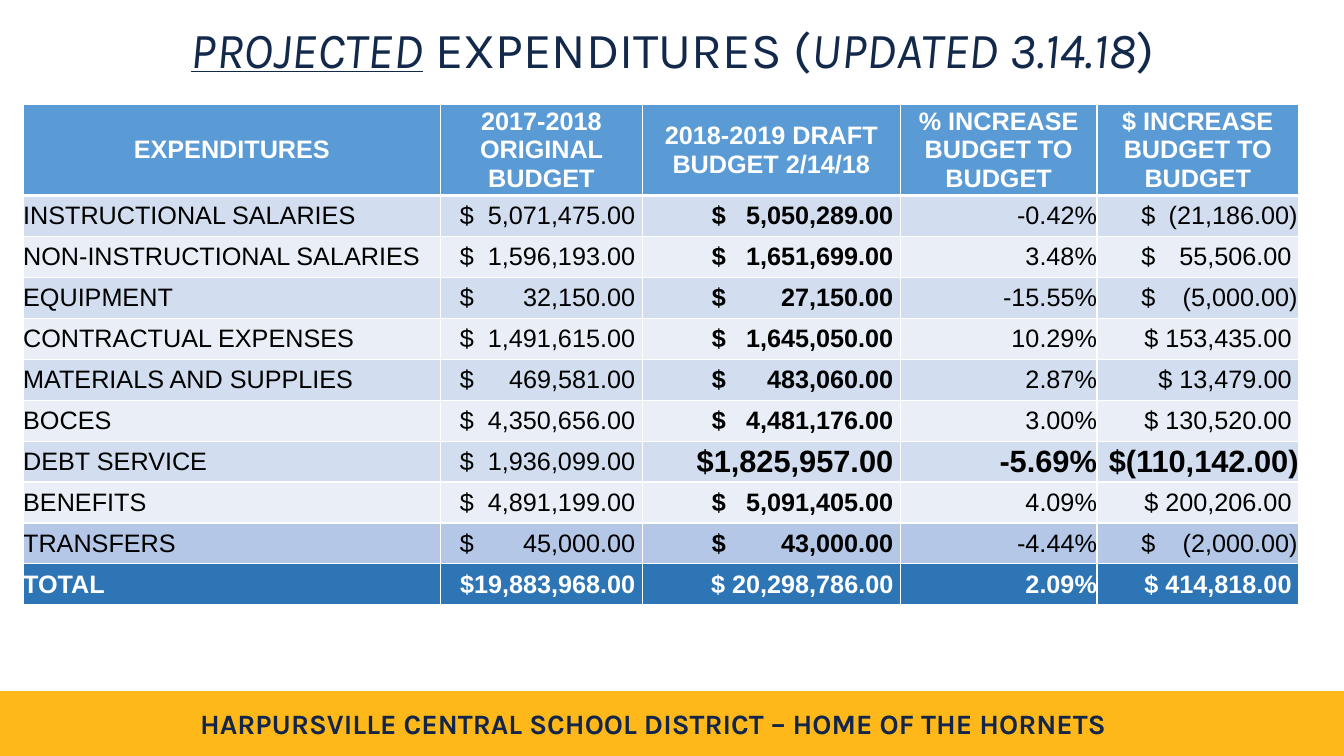
"""Build the projected expenditures slide with its budget table."""
import pptx
import pptx.util
import pptx.dml.color
import pptx.enum.shapes
import pptx.enum.text
import pptx.oxml.ns
import lxml.etree

COLORS = {
    "navy": "13294B", "footer": "132649", "gold": "FFB819", "white": "FFFFFF",
    "black": "000000", "header": "5B9BD5", "odd": "D2DEEF", "even": "EAEFF7",
    "transfers": "B4C7E7", "total": "2E75B6",
}
ALIGN = pptx.enum.text.PP_ALIGN
MIDDLE = pptx.enum.text.MSO_ANCHOR.MIDDLE
inch = pptx.util.Inches


def rgb(name):
    return pptx.dml.color.RGBColor.from_string(COLORS[name])


def write(paragraph, text, color, **formats):
    run = paragraph.add_run()
    run.text = text
    run.font.color.rgb = rgb(color)
    for attribute, value in formats.items():
        setattr(run.font, attribute, value)


deck = pptx.Presentation()
deck.slide_width, deck.slide_height = inch(13.33), inch(7.5)
slide = deck.slides.add_slide(deck.slide_layouts[6])
grid = [inch(part) for part in (0, 6.86, 13.33, 0.63)]

band = slide.shapes.add_shape(pptx.enum.shapes.MSO_SHAPE.RECTANGLE, *grid)
band.shadow.inherit = False
band.fill.solid()
band.fill.fore_color.rgb = rgb("gold")
band.line.color.rgb = rgb("gold")
band.line.width = pptx.util.Pt(1)

motto = slide.shapes.add_textbox(*[inch(part) for part in (1.76, 6.96, 9.44, 0.44)]).text_frame
motto.word_wrap = True
motto.auto_size = pptx.enum.text.MSO_AUTO_SIZE.SHAPE_TO_FIT_TEXT
motto.paragraphs[0].alignment = ALIGN.CENTER
write(motto.paragraphs[0], "HARPURSVILLE CENTRAL SCHOOL DISTRICT – HOME OF THE HORNETS",
      "footer", name="Karla", size=pptx.util.Pt(20), bold=True)

heading = slide.shapes.add_textbox(*[inch(part) for part in (0.92, 0, 11.5, 1.04)])
heading.fill.solid()
heading.fill.fore_color.rgb = rgb("white")
heading.text_frame.word_wrap = True
heading.text_frame.vertical_anchor = MIDDLE
headline = heading.text_frame.paragraphs[0]
headline.alignment = ALIGN.CENTER
headline.line_spacing = 0.9
for words, italic, underline in [
    ("PROJECTED", True, True),
    (" EXPENDITURES (", False, False),
    ("UPDATED 3.14.18", True, False),
    (")", False, False),
]:
    write(headline, words, "navy", name="Karla", size=pptx.util.Pt(36),
          italic=italic, underline=underline)

BUDGET = [
    ["EXPENDITURES", "2017-2018 ORIGINAL BUDGET", "2018-2019 DRAFT BUDGET 2/14/18",
     "% INCREASE BUDGET TO BUDGET", "$ INCREASE BUDGET TO BUDGET"],
    ["INSTRUCTIONAL SALARIES", "\t$\t5,071,475.00", "\t$\t5,050,289.00", "-0.42%", "\t$\t(21,186.00)"],
    ["NON-INSTRUCTIONAL SALARIES", "\t$\t1,596,193.00", "\t$\t1,651,699.00", "3.48%", "\t$\t55,506.00"],
    ["EQUIPMENT", "\t$\t32,150.00", "\t$\t27,150.00", "-15.55%", "\t$\t(5,000.00)"],
    ["CONTRACTUAL EXPENSES", "\t$\t1,491,615.00", "\t$\t1,645,050.00", "10.29%", "$ 153,435.00"],
    ["MATERIALS AND SUPPLIES", "\t$\t469,581.00", "\t$\t483,060.00", "2.87%", "$ 13,479.00"],
    ["BOCES", "\t$\t4,350,656.00", "\t$\t4,481,176.00", "3.00%", "$ 130,520.00"],
    ["DEBT SERVICE", "\t$\t1,936,099.00", "$1,825,957.00", "-5.69%", "$(110,142.00)"],
    ["BENEFITS", "\t$\t4,891,199.00", "\t$\t5,091,405.00", "4.09%", "$ 200,206.00"],
    ["TRANSFERS", "\t$\t45,000.00", "\t$\t43,000.00", "-4.44%", "\t$\t(2,000.00)"],
    ["TOTAL", "$19,883,968.00", "$ 20,298,786.00", "2.09%", "$ 414,818.00"],
]
WIDTHS = [4.14, 2, 2.56, 1.95, 2]
DOLLAR_STOPS = {1: 0.19, 2: 0.69, 4: 0.44}
HEADER_HEIGHT, BODY_HEIGHT = 0.83, 4.06
LAST = len(BUDGET) - 1
ROW_FILLS = {0: "header", LAST - 1: "transfers", LAST: "total"}

budget_table = slide.shapes.add_table(
    len(BUDGET), len(WIDTHS), inch(0.23), inch(1.04),
    inch(sum(WIDTHS)), inch(HEADER_HEIGHT + BODY_HEIGHT)).table
budget_table.first_row = budget_table.horz_banding = False
for column, width in zip(budget_table.columns, WIDTHS):
    column.width = inch(width)

for r, entries in enumerate(BUDGET):
    budget_table.rows[r].height = inch(BODY_HEIGHT / LAST if r else HEADER_HEIGHT)
    debt = entries[0] == "DEBT SERVICE"
    for c, entry in enumerate(entries):
        cell = budget_table.cell(r, c)
        tabbed = "\t" in entry
        gap = 0.07 if r and c and entry.endswith("0") else 0
        for attribute, value in {
            "margin_left": 0, "margin_top": 0, "margin_bottom": 0,
            "margin_right": 0 if tabbed else inch(gap), "vertical_anchor": MIDDLE,
        }.items():
            setattr(cell, attribute, value)

        properties = cell._tc.get_or_add_tcPr()
        for side in "LRTB":
            thick = (r == 0 and side == "B") or (r == 1 and side == "T")
            border = lxml.etree.SubElement(properties, pptx.oxml.ns.qn(f"a:ln{side}"),
                                           w=str(pptx.util.Pt(3 if thick else 1)))
            paint = lxml.etree.SubElement(border, pptx.oxml.ns.qn("a:solidFill"))
            lxml.etree.SubElement(paint, pptx.oxml.ns.qn("a:srgbClr"), val=COLORS["white"])
        cell.fill.solid()
        cell.fill.fore_color.rgb = rgb(ROW_FILLS.get(r, "odd" if r % 2 else "even"))

        line = cell.text_frame.paragraphs[0]
        if r == 0:
            line.alignment = ALIGN.CENTER
        else:
            line.alignment = ALIGN.LEFT if c == 0 or tabbed else ALIGN.RIGHT
        if tabbed:
            stops = lxml.etree.SubElement(line._p.get_or_add_pPr(), pptx.oxml.ns.qn("a:tabLst"))
            for stop, side in [(DOLLAR_STOPS[c], "l"), (WIDTHS[c] - max(gap, 0.01), "r")]:
                lxml.etree.SubElement(stops, pptx.oxml.ns.qn("a:tab"),
                                      pos=str(inch(stop)), algn=side)
        write(line, entry, "white" if r in (0, LAST) else "black", name="Arial",
              size=pptx.util.Pt(22 if debt and c > 1 else 18),
              bold=r in (0, LAST) or c == 2 or (debt and c > 1))

deck.save("out.pptx")
